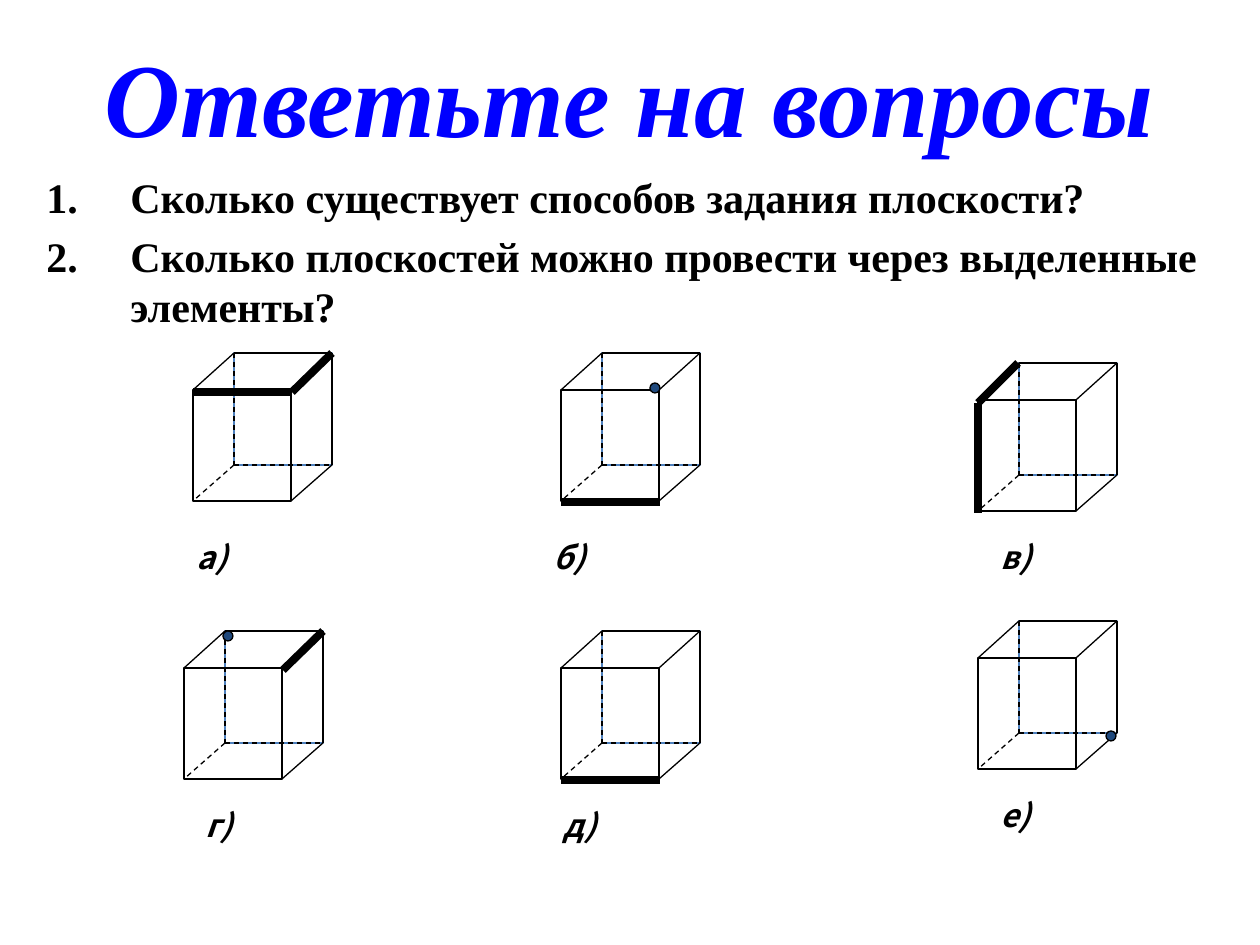
from lxml import etree
from pptx import Presentation
from pptx import util as u
from pptx.dml.color import RGBColor
from pptx.enum import dml, shapes, text
from pptx.oxml.ns import qn

SERIF, SANS = "Times New Roman", "Noto Sans CJK JP"
BLACK, BLUE, NAVY, EDGE_BLUE = "000000", "0000FF", "1F497D", "4F81BD"
THIN, THICK = 0.75, 4.5

TITLE = "Ответьте на вопросы"
QUESTIONS = [
    "Сколько существует способов задания плоскости?",
    "Сколько плоскостей можно провести через выделенные элементы?",
]

# Cube geometry in px, measured from the cube's top left corner
WIDTH, HEIGHT = 98, 111
DEPTH_X, DEPTH_Y = 41, 37
DOT = 10
RIGHT, BOTTOM = DEPTH_X + WIDTH, DEPTH_Y + HEIGHT
BACK_LEFT, BACK_RIGHT = (DEPTH_X, 0), (RIGHT, 0)
BACK_LOW_LEFT, BACK_LOW_RIGHT = (DEPTH_X, HEIGHT + 1), (RIGHT, HEIGHT + 1)
FRONT_LEFT, FRONT_RIGHT = (0, DEPTH_Y), (WIDTH, DEPTH_Y)
FRONT_LOW_LEFT, FRONT_LOW_RIGHT = (0, BOTTOM), (WIDTH, BOTTOM)
VISIBLE = [
    (BACK_LOW_RIGHT, FRONT_LOW_RIGHT),
    (BACK_RIGHT, BACK_LOW_RIGHT),
    (BACK_LEFT, BACK_RIGHT),
    (BACK_LEFT, FRONT_LEFT),
    (BACK_RIGHT, FRONT_RIGHT),
]
HIDDEN = [
    (BACK_LOW_LEFT, FRONT_LOW_LEFT),
    (BACK_LOW_LEFT, BACK_LOW_RIGHT),
    (BACK_LEFT, BACK_LOW_LEFT),
]

# Highlighted edges
TOP_FRONT = ((0, 39), (99, 39))
TOP_RIGHT = (BACK_RIGHT, (99, 39))
TOP_LEFT = ((40, 0), (0, 40))
LOW_FRONT = ((0, 149), (99, 149))
LEFT_FRONT = ((0, 40), (0, 150))

# Label, label position, cube position, highlighted edges, dot position
CUBES = [
    ("а)", (184, 532), (193, 353), [TOP_FRONT, TOP_RIGHT], None),
    ("б)", (541, 532), (561, 353), [LOW_FRONT], (89, 30)),
    ("в)", (988, 532), (978, 363), [TOP_LEFT, LEFT_FRONT], None),
    ("г)", (193, 800), (184, 631), [TOP_RIGHT], (39, 0)),
    ("д)", (551, 800), (561, 631), [LOW_FRONT], None),
    ("е)", (988, 790), (978, 621), [], (128, 110)),
]


def px(length):
    return u.Emu(round(length * 914400 / 126))


def color(value):
    return RGBColor.from_string(value)


def add_text(page, at, lines, size, font, ink=BLACK, italic=False, align=None):
    box = page.shapes.add_textbox(*map(px, at))
    frame = box.text_frame
    frame.word_wrap = True
    for index, line in enumerate(lines):
        para = frame.paragraphs[0] if index == 0 else frame.add_paragraph()
        para.alignment = align
        span = para.add_run()
        span.text = line
        span.font.name, span.font.size = font, u.Pt(size)
        span.font.bold, span.font.italic = True, italic
        span.font.color.rgb = color(ink)
    return frame


def number_paragraphs(frame, indent, gap):
    for index, para in enumerate(frame.paragraphs):
        if index:
            para.space_before = u.Pt(gap)
        props = para._p.get_or_add_pPr()
        props.set("marL", str(px(indent)))
        props.set("indent", str(-px(indent)))
        etree.SubElement(props, qn("a:buAutoNum"), type="arabicPeriod")


def add_outline(group, kind, at, line, fill=None):
    shape = group.shapes.add_shape(kind, *map(px, at))
    shape.shadow.inherit = False
    shape.line.color.rgb = color(line)
    shape.line.width = u.Pt(THIN)
    if fill:
        shape.fill.solid()
        shape.fill.fore_color.rgb = color(fill)
    else:
        shape.fill.background()


def add_edge(group, origin, edge, width=THIN, dashed=False):
    (x, y), (start, end) = origin, edge
    ends = (x + start[0], y + start[1], x + end[0], y + end[1])
    line = group.shapes.add_connector(shapes.MSO_CONNECTOR.STRAIGHT, *map(px, ends))
    line.line.color.rgb = color(BLACK)
    line.line.width = u.Pt(width)
    if dashed:
        line.line.dash_style = dml.MSO_LINE.DASH
    etree.SubElement(line._element.spPr, qn("a:effectLst"))


def add_cube(page, origin, highlights, dot):
    x, y = origin
    group = page.shapes.add_group_shape()
    rectangle = shapes.MSO_SHAPE.RECTANGLE
    add_outline(group, rectangle, (x, y + DEPTH_Y, WIDTH, HEIGHT), BLACK)
    add_outline(group, rectangle, (x + DEPTH_X, y, WIDTH, HEIGHT + 1), EDGE_BLUE)
    for edge in VISIBLE:
        add_edge(group, origin, edge)
    for edge in HIDDEN:
        add_edge(group, origin, edge, dashed=True)
    for edge in highlights:
        add_edge(group, origin, edge, THICK)
    if dot:
        place = (x + dot[0], y + dot[1], DOT, DOT)
        add_outline(group, shapes.MSO_SHAPE.OVAL, place, BLACK, NAVY)


def main():
    deck = Presentation()
    deck.slide_width, deck.slide_height = px(1260), px(945)
    page = deck.slides.add_slide(deck.slide_layouts[6])

    questions = add_text(page, (34, 165, 1226, 743), QUESTIONS, 24, SERIF)
    number_paragraphs(questions, indent=84, gap=5)
    for label, label_at, cube_at, highlights, dot in CUBES:
        add_cube(page, cube_at, highlights, dot)
        add_text(page, (*label_at, 59, 50), [label], 18, SANS, italic=True)
    add_text(page, (34, 26, 1191, 139), [TITLE], 60, SERIF, BLUE, True,
             text.PP_ALIGN.CENTER)
    deck.save("out.pptx")


if __name__ == "__main__":
    main()
